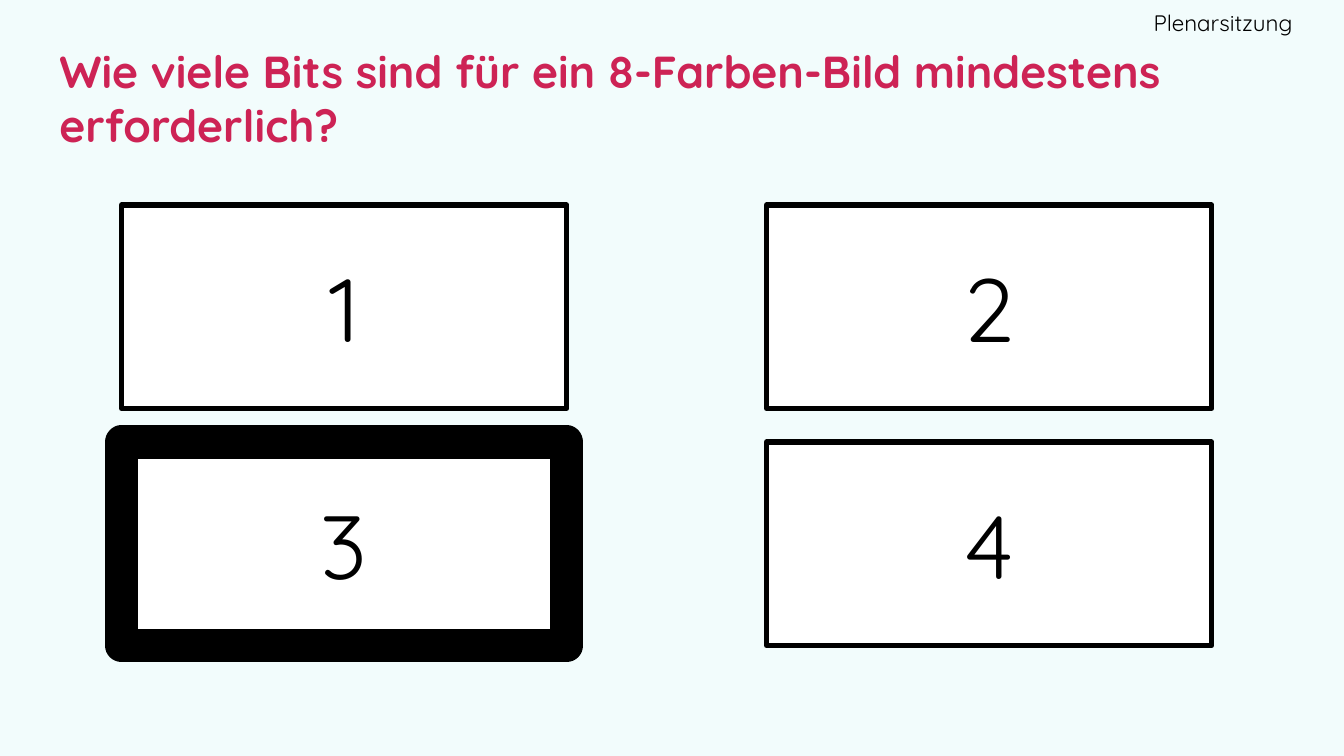
from dataclasses import dataclass

from lxml.etree import SubElement
from pptx import Presentation
from pptx.dml.color import RGBColor
from pptx.enum.shapes import MSO_SHAPE
from pptx.enum.text import MSO_ANCHOR, MSO_AUTO_SIZE, PP_ALIGN
from pptx.oxml.ns import qn
from pptx.util import Cm, Pt


@dataclass(frozen=True)
class Theme:
    font: str = "Quicksand"
    background: RGBColor = RGBColor(0xF2, 0xFC, 0xFC)
    accent: RGBColor = RGBColor(0xCD, 0x23, 0x55)
    ink: RGBColor = RGBColor(0, 0, 0)
    card: RGBColor = RGBColor(0xFF, 0xFF, 0xFF)
    title_size: Pt = Pt(24)
    label_size: Pt = Pt(12)
    answer_size: Pt = Pt(48)
    border: Pt = Pt(3)
    marked_border: Pt = Pt(18)


THEME = Theme()


def write_text(shape, text, size, color, alignment, margins, bold=False):
    """Set one vertically centred paragraph; margins are left, top, right, bottom."""
    frame = shape.text_frame
    frame.text = text
    frame.word_wrap = True
    frame.auto_size = MSO_AUTO_SIZE.NONE
    frame.vertical_anchor = MSO_ANCHOR.MIDDLE
    (frame.margin_left, frame.margin_top,
     frame.margin_right, frame.margin_bottom) = margins
    paragraph = frame.paragraphs[0]
    paragraph.alignment = alignment
    paragraph.font.name = THEME.font
    paragraph.font.size = size
    paragraph.font.bold = bold
    paragraph.font.color.rgb = color


def place_title(slide, text, left, top, width, height):
    title = slide.shapes.title
    title.left, title.top, title.width, title.height = left, top, width, height
    write_text(title, text, THEME.title_size, THEME.accent, PP_ALIGN.LEFT,
               [Cm(0.25)] * 4, bold=True)


def place_label(slide, text, left, top, width, height):
    label = slide.shapes.add_textbox(left, top, width, height)
    write_text(label, text, THEME.label_size, THEME.ink, PP_ALIGN.RIGHT,
               (Cm(0.25), Cm(0.25), 0, Cm(0.25)))


def place_answer(slide, text, marked, left, top, width, height):
    answer = slide.shapes.add_shape(MSO_SHAPE.RECTANGLE, left, top, width, height)
    answer.shadow.inherit = False
    answer.fill.solid()
    answer.fill.fore_color.rgb = THEME.card
    answer.line.color.rgb = THEME.ink
    answer.line.width = THEME.marked_border if marked else THEME.border
    SubElement(answer.line._get_or_add_ln(), qn("a:round"))
    write_text(answer, text, THEME.answer_size, THEME.ink, PP_ALIGN.CENTER,
               [Cm(0.13)] * 4)


def place_answer_grid(slide, answers, correct, left, top, width, height):
    """Spread the answers over two columns, with the outer cards on the box edges."""
    columns = 2
    rows = len(answers) // columns
    card_width, card_height = Cm(8.41), Cm(3.84)
    step_x = (width - card_width) // (columns - 1)
    step_y = (height - card_height) // (rows - 1)
    for index, answer in enumerate(answers):
        row, column = divmod(index, columns)
        place_answer(slide, answer, answer == correct,
                     left + column * step_x, top + row * step_y,
                     card_width, card_height)


def main():
    presentation = Presentation()
    presentation.slide_width = Cm(25.4)
    presentation.slide_height = Cm(14.29)
    slide = presentation.slides.add_slide(
        presentation.slide_layouts.get_by_name("Title Only"))
    slide.background.fill.solid()
    slide.background.fill.fore_color.rgb = THEME.background

    place_title(slide, "Wie viele Bits sind für ein 8-Farben-Bild mindestens erforderlich?",
                Cm(0.87), Cm(0.87), Cm(23.67), Cm(1.96))
    place_answer_grid(slide, ["1", "2", "3", "4"], "3",
                      Cm(2.3), Cm(3.88), Cm(20.6), Cm(8.32))
    place_label(slide, "Plenarsitzung", Cm(19), Cm(0), Cm(5.43), Cm(0.87))
    presentation.save("out.pptx")


if __name__ == "__main__":
    main()
